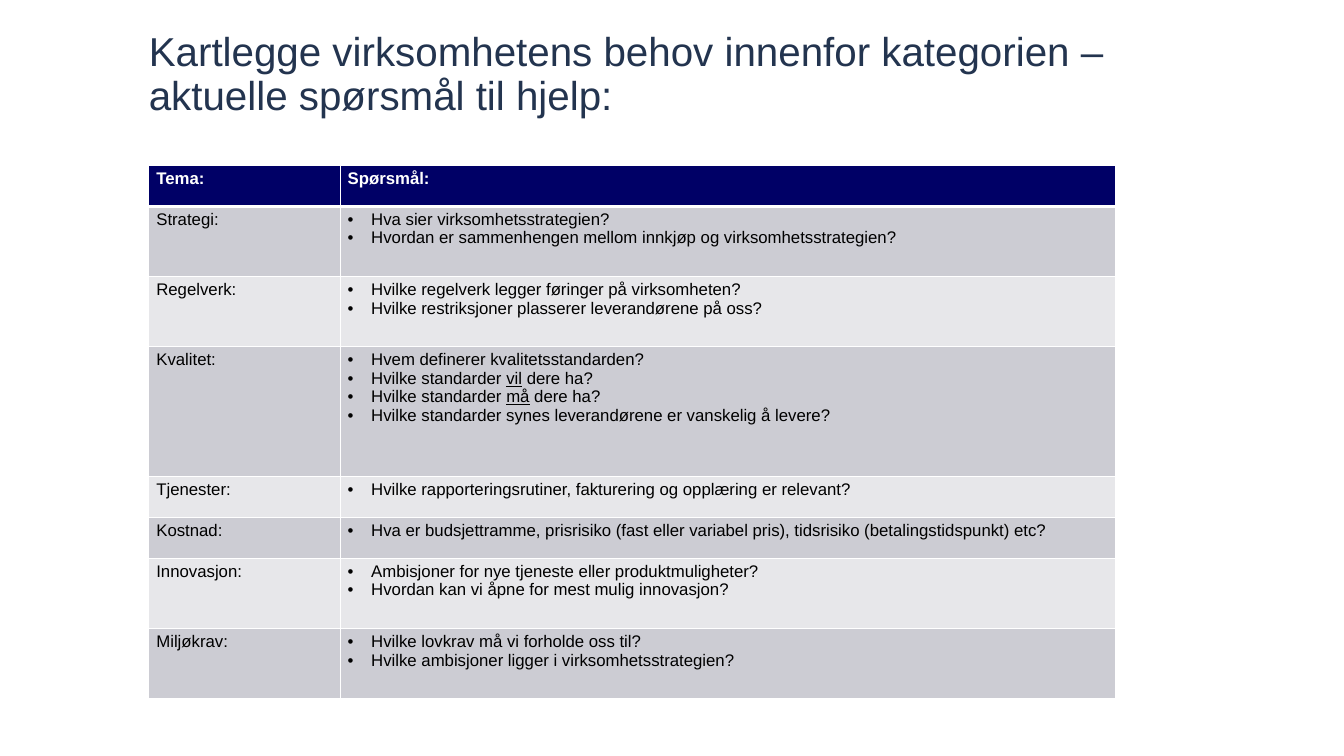
from pptx import Presentation
from pptx import util as u
from pptx.dml.color import RGBColor
from pptx.enum import text
from pptx.oxml.ns import qn
from lxml import etree

TITLE = "Kartlegge virksomhetens behov innenfor kategorien – aktuelle spørsmål til hjelp:"
HEAD = ("Tema:", "Spørsmål:")
TOPICS = [
    ("Strategi:", ["Hva sier virksomhetsstrategien?",
                   "Hvordan er sammenhengen mellom innkjøp og virksomhetsstrategien?"]),
    ("Regelverk:", ["Hvilke regelverk legger føringer på virksomheten?",
                    "Hvilke restriksjoner plasserer leverandørene på oss?"]),
    ("Kvalitet:", ["Hvem definerer kvalitetsstandarden?",
                   "Hvilke standarder _vil_ dere ha?",
                   "Hvilke standarder _må_ dere ha?",
                   "Hvilke standarder synes leverandørene er vanskelig å levere?"]),
    ("Tjenester:", ["Hvilke rapporteringsrutiner, fakturering og opplæring er relevant?"]),
    ("Kostnad:", ["Hva er budsjettramme, prisrisiko (fast eller variabel pris), "
                  "tidsrisiko (betalingstidspunkt) etc?"]),
    ("Innovasjon:", ["Ambisjoner for nye tjeneste eller produktmuligheter?",
                     "Hvordan kan vi åpne for mest mulig innovasjon?"]),
    ("Miljøkrav:", ["Hvilke lovkrav må vi forholde oss til?",
                    "Hvilke ambisjoner ligger i virksomhetsstrategien?"]),
]
THEME = {
    "font": "Arial", "title": "23344F", "head": "000066", "light": "FFFFFF",
    "dark": "000000", "bands": ("CCCCD3", "E7E7EA"),
    "title_pt": 38.4, "body_pt": 16,
}
LEFT, TOP, WIDTH = 5, 5.56, 32.5
COLS = (6.43, 26.06)
HEIGHTS = {1: 1.37, 2: 2.36, 4: 4.37}
INDENT = u.Cm(0.79)


def style(run, size, color, bold=False):
    font = run.font
    font.name, font.size, font.bold = THEME["font"], u.Pt(size), bold
    font.color.rgb = RGBColor.from_string(color)


def border(cell, low):
    props = cell._tc.get_or_add_tcPr()
    for spot, (side, width) in enumerate((("L", 1), ("R", 1), ("T", 1), ("B", low))):
        line = etree.Element(qn(f"a:ln{side}"), w=str(u.Pt(width)))
        fill = etree.SubElement(line, qn("a:solidFill"))
        etree.SubElement(fill, qn("a:srgbClr"), val=THEME["light"])
        props.insert(spot, line)


def bullet(para):
    props = para._p.get_or_add_pPr()
    props.set("marL", str(INDENT))
    props.set("indent", str(-INDENT))
    etree.SubElement(props, qn("a:buFont"), typeface=THEME["font"])
    etree.SubElement(props, qn("a:buChar"), char="•")


def write(cell, lines, fill, color, bold=False, dots=False, low=1):
    cell.fill.solid()
    cell.fill.fore_color.rgb = RGBColor.from_string(fill)
    border(cell, low)
    frame = cell.text_frame
    for row, line in enumerate(lines):
        para = frame.add_paragraph() if row else frame.paragraphs[0]
        if dots:
            bullet(para)
        for part, words in enumerate(line.split("_")):
            run = para.add_run()
            run.text = words
            style(run, THEME["body_pt"], color, bold)
            if part % 2:
                run.font.underline = True


def add_title(slide):
    title = slide.shapes.title
    title.left, title.top, title.width, title.height = map(u.Cm, (LEFT, 1.3, WIDTH, 2.69))
    frame = title.text_frame
    frame.text = TITLE
    frame.word_wrap = True
    frame.auto_size = text.MSO_AUTO_SIZE.NONE
    frame.vertical_anchor = text.MSO_ANCHOR.BOTTOM
    frame.margin_left = frame.margin_right = frame.margin_top = frame.margin_bottom = 0
    para = frame.paragraphs[0]
    para.alignment = text.PP_ALIGN.LEFT
    para.line_spacing = 0.9
    style(para.runs[0], THEME["title_pt"], THEME["title"])


def add_grid(slide):
    tall = [HEIGHTS[1]] + [HEIGHTS[len(asks)] for _, asks in TOPICS]
    table = slide.shapes.add_table(len(tall), len(COLS), u.Cm(LEFT), u.Cm(TOP),
                                   u.Cm(sum(COLS)), u.Cm(sum(tall))).table
    for col, width in zip(table.columns, COLS):
        col.width = u.Cm(width)
    for row, height in zip(table.rows, tall):
        row.height = u.Cm(height)
    for col, label in enumerate(HEAD):
        write(table.cell(0, col), [label], THEME["head"], THEME["light"], bold=True, low=3)
    for row, (topic, asks) in enumerate(TOPICS):
        band = THEME["bands"][row % 2]
        write(table.cell(row + 1, 0), [topic], band, THEME["dark"])
        write(table.cell(row + 1, 1), asks, band, THEME["dark"], dots=True)


def main():
    deck = Presentation()
    deck.slide_width, deck.slide_height = u.Cm(45.16), u.Cm(25.4)
    slide = deck.slides.add_slide(deck.slide_layouts[5])
    add_title(slide)
    add_grid(slide)
    deck.save("out.pptx")


if __name__ == "__main__":
    main()
